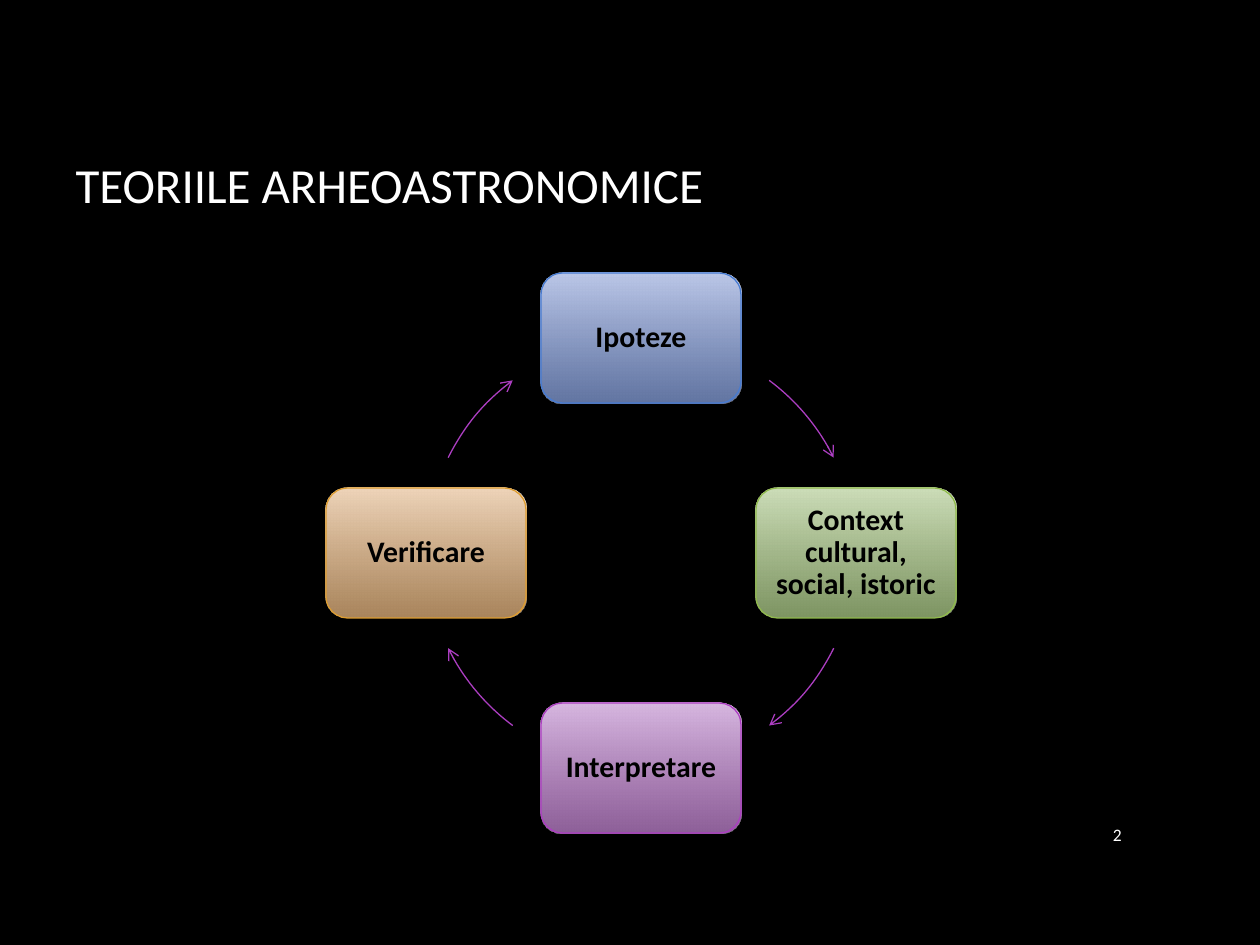
import pptx
import pptx.dml.color
import pptx.enum.shapes
import pptx.enum.text
import pptx.oxml
import pptx.oxml.ns
import pptx.util

ALIGN = pptx.enum.text.PP_ALIGN
SHAPE = pptx.enum.shapes.MSO_SHAPE


def px(length):
    """Turn px (126 to the inch) into EMU."""
    return pptx.util.Emu(round(length * 914400 / 126))


def color(hex_value):
    return pptx.dml.color.RGBColor.from_string(hex_value)


def sub_element(parent, tag, **attributes):
    element = pptx.oxml.parse_xml(f"<{tag} {pptx.oxml.ns.nsdecls('a')}/>")
    for name, value in attributes.items():
        element.set(name, value)
    parent.append(element)


class CycleSlide:
    """Style and current slide of a cycle diagram."""

    font = "Calibri"
    background = "000000"
    light = "FFFFFF"
    dark = "000000"
    arrow_color = "AC3EC1"
    line_width = pptx.util.Pt(0.75)

    def __init__(self, deck):
        self.slide = deck.slides.add_slide(deck.slide_layouts[5])
        fill = self.slide.background.fill
        fill.solid()
        fill.fore_color.rgb = color(self.background)

    def set_text(self, shape, text, size, ink, align, bold=False):
        frame = shape.text_frame
        frame.text = text
        frame.word_wrap = True
        frame.auto_size = pptx.enum.text.MSO_AUTO_SIZE.NONE
        frame.vertical_anchor = pptx.enum.text.MSO_ANCHOR.MIDDLE
        paragraph = frame.paragraphs[0]
        paragraph.alignment = align
        font = paragraph.runs[0].font
        font.name, font.size, font.bold = self.font, pptx.util.Pt(size), bold
        font.color.rgb = color(ink)

    def title(self, text, left, top, width, height):
        title = self.slide.shapes.title
        title.left, title.top = px(left), px(top)
        title.width, title.height = px(width), px(height)
        self.set_text(title, text, 28, self.light, ALIGN.LEFT)

    def page_number(self, text, left, top, width, height):
        number = self.slide.shapes.add_textbox(px(left), px(top), px(width), px(height))
        self.set_text(number, text, 10, self.light, ALIGN.RIGHT)

    def step(self, text, center_x, center_y, width, height, top_color, bottom_color, edge):
        step = self.slide.shapes.add_shape(
            SHAPE.ROUNDED_RECTANGLE, px(center_x - width / 2), px(center_y - height / 2),
            px(width), px(height))
        step.shadow.inherit = False
        step.line.color.rgb = color(edge)
        step.line.width = self.line_width
        # Gradient from top to bottom, its lower end partly transparent
        step.fill.gradient()
        step.fill.gradient_angle = 270
        stops = step.fill.gradient_stops
        for stop, position, tint in zip(stops, (0, 1), (top_color, bottom_color)):
            stop.position = position
            stop.color.rgb = color(tint)
        gradient = next(step.element.iter(pptx.oxml.ns.qn("a:gradFill")))
        bottom = list(gradient.iter(pptx.oxml.ns.qn("a:srgbClr")))[-1]
        sub_element(bottom, "a:alpha", val="74000")
        # Label
        self.set_text(step, text, 17, self.dark, ALIGN.CENTER, bold=True)
        frame = step.text_frame
        frame.margin_left = frame.margin_right = px(9)
        frame.margin_top = frame.margin_bottom = px(9)
        frame.paragraphs[0].line_spacing = 0.9

    def arc_arrow(self, center_x, center_y, radius, start, end):
        arc = self.slide.shapes.add_shape(
            SHAPE.ARC, px(center_x - radius), px(center_y - radius),
            px(2 * radius), px(2 * radius))
        arc.shadow.inherit = False
        arc.fill.background()
        # Adjustments count 0.6 per degree
        for index, degrees in enumerate((start, end)):
            arc.adjustments[index] = degrees % 360 * 0.6
        arc.line.color.rgb = color(self.arrow_color)
        arc.line.width = self.line_width
        outline = next(arc.element.iter(pptx.oxml.ns.qn("a:ln")))
        sub_element(outline, "a:tailEnd", type="arrow")


def main():
    deck = pptx.Presentation()
    deck.slide_width, deck.slide_height = px(1260), px(945)
    cycle = CycleSlide(deck)

    cycle.title("TEORIILE ARHEOASTRONOMICE", 63, 84, 1071, 200)
    cycle.page_number("2", 1076, 809, 58, 52)

    # Four steps clockwise from the top, each followed by an arrow
    center_x, center_y, radius = 641, 553, 215
    steps = [
        ("Ipoteze", 0, -1, "BCC8E9", "859EDA", "477BD1"),
        ("Context cultural, social, istoric", 1, 0, "CDDEB9", "ABC987", "90BA4C"),
        ("Interpretare", 0, 1, "D8B7E1", "BF82CE", "AC3EC1"),
        ("Verificare", -1, 0, "EFD5BA", "E4B47E", "DD9D31"),
    ]
    for index, (text, across, down, *colors) in enumerate(steps):
        cycle.step(text, center_x + across * radius, center_y + down * radius,
                   200, 130, *colors)
        # The wide top and bottom steps push their arrows further round
        gap = 26.3 if across else 36.6
        start = 90 * index - 90 + gap
        cycle.arc_arrow(center_x, center_y, radius, start, start + 27.1)

    deck.save("out.pptx")


if __name__ == "__main__":
    main()
